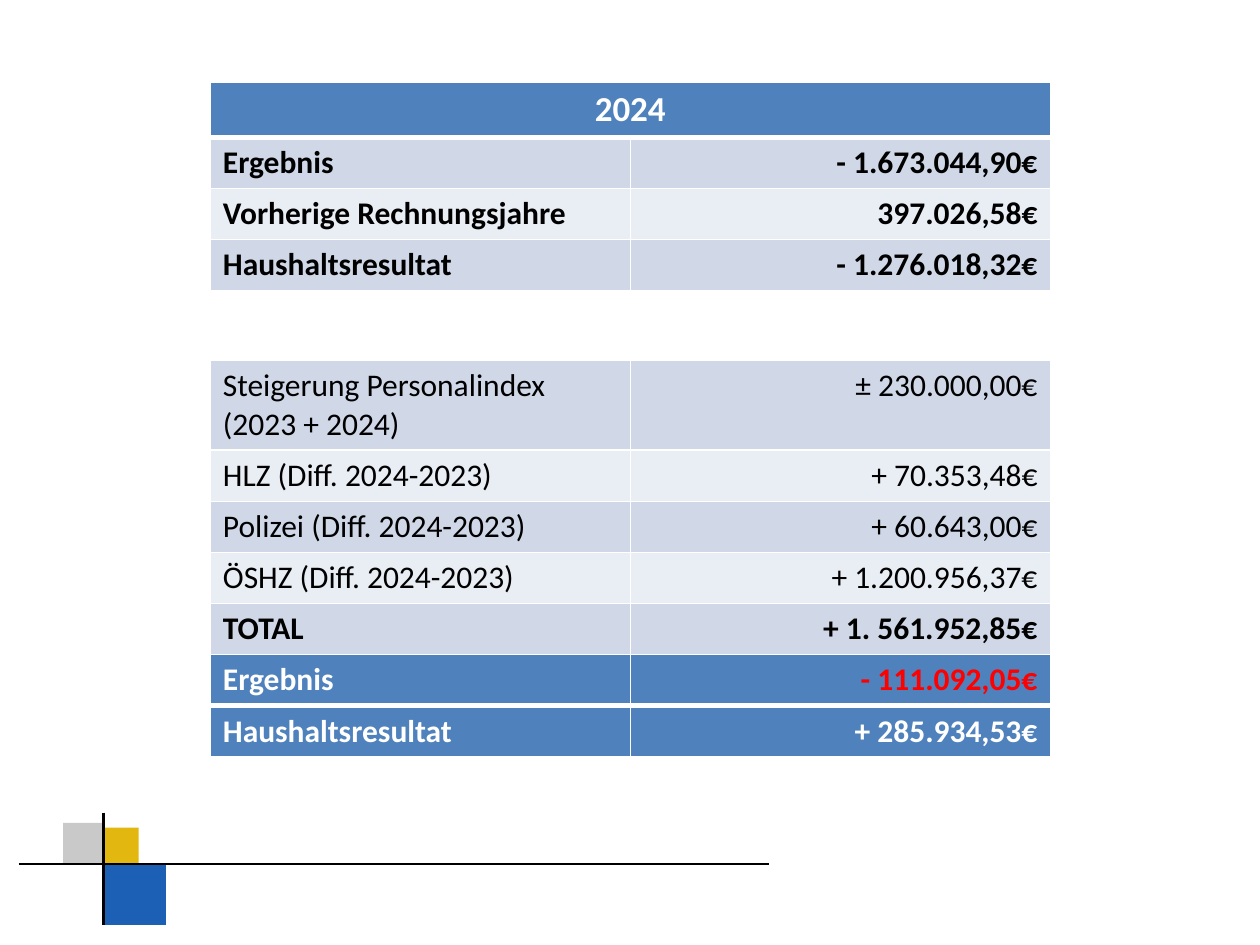
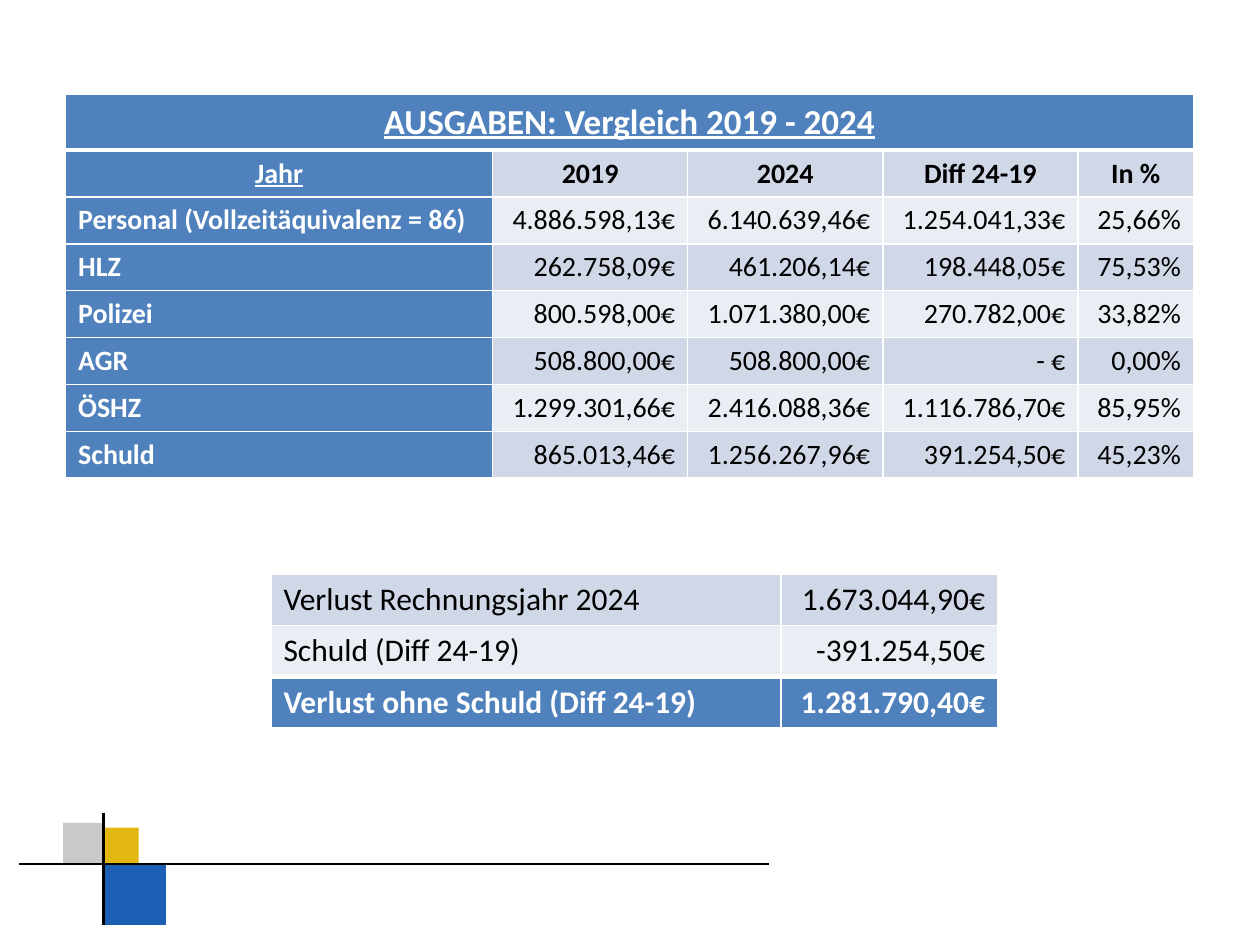
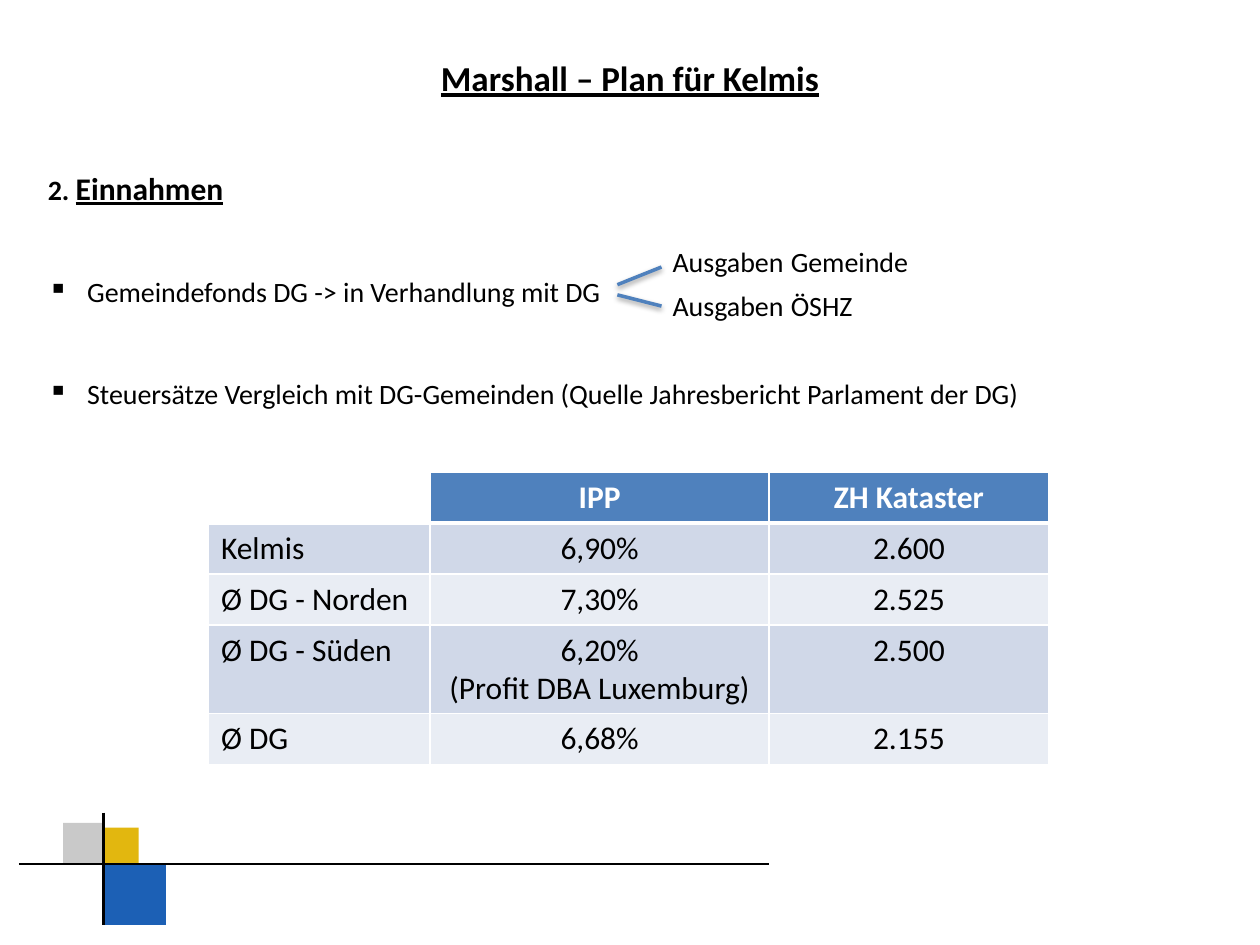
from lxml import etree
from pptx import Presentation
from pptx.dml.color import RGBColor
from pptx.enum.shapes import MSO_CONNECTOR, MSO_SHAPE
from pptx.enum.text import MSO_ANCHOR, PP_ALIGN
from pptx.oxml.ns import qn
from pptx.util import Pt

LEFT, CENTER, RIGHT = PP_ALIGN.LEFT, PP_ALIGN.CENTER, PP_ALIGN.RIGHT
TOP, MIDDLE = MSO_ANCHOR.TOP, MSO_ANCHOR.MIDDLE
STRAIGHT, RECTANGLE = MSO_CONNECTOR.STRAIGHT, MSO_SHAPE.RECTANGLE
FONT = "Calibri"
COLORS = {
    "text": "000000", "white": "FFFFFF", "accent": "4F81BD", "negative": "FF0000",
    "band_dark": "D0D8E8", "band_light": "E9EDF4",
    "blue": "1C60B5", "yellow": "E2B70F", "gray": "C9C9C9",
}
ROLES = {
    "title": {"size": 20, "bold": True, "accent": True, "align": CENTER},
    "head": {"bold": True, "accent": True, "align": CENTER},
    "years": {"bold": True, "align": CENTER},
    "body": {},
    "bold": {"bold": True},
    "total": {"bold": True, "accent": True},
}


def rgb(name):
    """Return the named palette colour."""
    return RGBColor.from_string(COLORS[name])


def add_text(paragraph, text, size=16, color="text", bold=False, underline=False, align=LEFT):
    """Append a formatted run to a paragraph."""
    paragraph.alignment = align
    run = paragraph.add_run()
    run.text = text
    font = run.font
    font.name, font.size = FONT, Pt(size)
    font.bold, font.underline = bold, underline
    font.color.rgb = rgb(color)


def add_frame(slide, left, top, width, height):
    """Add a wrapping text box and return its text frame."""
    frame = slide.shapes.add_textbox(Pt(left), Pt(top), Pt(width), Pt(height)).text_frame
    frame.word_wrap = True
    return frame


def add_line(slide, start, end, color, weight, shadow=False):
    """Draw a straight line, with a soft shadow on request."""
    line = slide.shapes.add_connector(STRAIGHT, *(Pt(value) for value in start + end))
    line.line.color.rgb = rgb(color)
    line.line.width = Pt(weight)
    effects = etree.SubElement(line._element.spPr, qn("a:effectLst"))
    if shadow:
        outer = etree.SubElement(effects, qn("a:outerShdw"), blurRad=str(Pt(3.1)),
                                 dist=str(Pt(1.6)), dir="5400000", rotWithShape="0")
        black = etree.SubElement(outer, qn("a:srgbClr"), val=COLORS["text"])
        etree.SubElement(black, qn("a:alpha"), val="38000")


def set_borders(cell, top, bottom):
    """Give a cell white borders with the given top and bottom weights."""
    properties = cell._tc.get_or_add_tcPr()
    for side, weight in (("L", 1), ("R", 1), ("T", top), ("B", bottom)):
        border = etree.SubElement(properties, qn(f"a:ln{side}"), w=str(Pt(weight)))
        fill = etree.SubElement(border, qn("a:solidFill"))
        etree.SubElement(fill, qn("a:srgbClr"), val=COLORS["white"])


def fill_cell(cell, text, fill, **text_format):
    """Fill a cell and write its lines, leaving an empty cell clear."""
    if not text:
        cell.fill.background()
        return
    cell.fill.solid()
    cell.fill.fore_color.rgb = rgb(fill)
    for number, line in enumerate(text.split("\n")):
        frame = cell.text_frame
        paragraph = frame.add_paragraph() if number else frame.paragraphs[0]
        add_text(paragraph, line, **text_format)


def add_table(slide, left, top, widths, rows, aligns, heavy, size=18, row_height=29.2,
              anchor=TOP, accent_column=False, underlined=(), negative=None):
    """Build a banded table with a heavy rule above the row numbered heavy."""
    table = slide.shapes.add_table(len(rows), len(widths), Pt(left), Pt(top),
                                   Pt(sum(widths)), Pt(row_height * len(rows))).table
    table.first_row = table.horz_banding = False
    for column, width in zip(table.columns, widths):
        column.width = Pt(width)
    band = 0
    for r, (role, *texts) in enumerate(rows):
        table.rows[r].height = Pt(row_height)
        style = ROLES[role]
        row_accent = style.get("accent", False)
        for c in range(len(widths)):
            cell = table.cell(r, c)
            cell.vertical_anchor = anchor
            set_borders(cell, 3 if r == heavy else 1, 3 if r + 1 == heavy else 1)
        if len(texts) == 1:
            table.cell(r, 0).merge(table.cell(r, len(widths) - 1))
        for c, text in enumerate(texts):
            accent = row_accent or (accent_column and c == 0)
            color = "white" if accent else "text"
            fill_cell(table.cell(r, c), text,
                      "accent" if accent else ("band_dark", "band_light")[band % 2],
                      size=style.get("size", size),
                      color="negative" if (r, c) == negative else color,
                      bold=style.get("bold", False) or accent,
                      underline=text in underlined,
                      align=style.get("align", aligns[c]))
        band += not row_accent


def add_footer_mark(slide, left, top):
    """Draw the squares and crossing rules at the foot of a slide."""
    cross_x, cross_y = left + 48.2, top + 29.4
    for x, y, side, color in ((48.7, 28.8, 35.3, "blue"), (48.3, 8.6, 20.2, "yellow"),
                              (25.2, 5.8, 23, "gray")):
        square = slide.shapes.add_shape(RECTANGLE, Pt(left + x), Pt(top + y), Pt(side), Pt(side))
        square.shadow.inherit = False
        square.fill.solid()
        square.fill.fore_color.rgb = rgb(color)
        square.line.fill.background()
    add_line(slide, (left, cross_y), (left + 428.4, cross_y), "text", 1.5)
    add_line(slide, (cross_x, top), (cross_x, top + 64.1), "text", 1.5)


def add_result_2024(slide, left, top):
    """Place the 2024 result above its adjusted calculation."""
    widths, aligns = (240, 240), (LEFT, RIGHT)
    add_table(slide, left, top, widths, [
        ("title", "2024"),
        ("bold", "Ergebnis", "- 1.673.044,90€"),
        ("bold", "Vorherige Rechnungsjahre", "397.026,58€"),
        ("bold", "Haushaltsresultat", "- 1.276.018,32€"),
    ], aligns, heavy=1)
    add_table(slide, left, top + 159.3, widths, [
        ("body", "Steigerung Personalindex (2023 + 2024)", "± 230.000,00€"),
        ("body", "HLZ (Diff. 2024-2023)", "+ 70.353,48€"),
        ("body", "Polizei (Diff. 2024-2023)", "+ 60.643,00€"),
        ("body", "ÖSHZ (Diff. 2024-2023)", "+ 1.200.956,37€"),
        ("bold", "TOTAL", "+ 1. 561.952,85€"),
        ("total", "Ergebnis", "- 111.092,05€"),
        ("total", "Haushaltsresultat", "+ 285.934,53€"),
    ], aligns, heavy=6, negative=(5, 1))


def add_expense_comparison(slide, left, top):
    """Place the expense comparison above the loss without debt."""
    heading = "AUSGABEN: Vergleich 2019 - 2024"
    add_table(slide, left, top, (244, 111.5, 111.5, 111.5, 66), [
        ("title", heading),
        ("years", "Jahr", "2019", "2024", "Diff 24-19", "In %"),
        ("body", "Personal (Vollzeitäquivalenz = 86)",
         "4.886.598,13€", "6.140.639,46€", "1.254.041,33€", "25,66%"),
        ("body", "HLZ", "262.758,09€", "461.206,14€", "198.448,05€", "75,53%"),
        ("body", "Polizei", "800.598,00€", "1.071.380,00€", "270.782,00€", "33,82%"),
        ("body", "AGR", "508.800,00€", "508.800,00€", "- €", "0,00%"),
        ("body", "ÖSHZ", "1.299.301,66€", "2.416.088,36€", "1.116.786,70€", "85,95%"),
        ("body", "Schuld", "865.013,46€", "1.256.267,96€", "391.254,50€", "45,23%"),
    ], (LEFT,) + (RIGHT,) * 4, heavy=1, size=16, row_height=26.7, anchor=MIDDLE,
        accent_column=True, underlined=(heading, "Jahr"))
    add_table(slide, left + 117.3, top + 274.3, (291.6, 123.8), [
        ("body", "Verlust Rechnungsjahr 2024", "1.673.044,90€"),
        ("body", "Schuld (Diff 24-19)", "-391.254,50€"),
        ("total", "Verlust ohne Schuld (Diff 24-19)", "1.281.790,40€"),
    ], (LEFT, RIGHT), heavy=2)


def add_bullet(frame, text):
    """Append a bulleted paragraph set apart from the one before."""
    paragraph = frame.add_paragraph()
    properties = paragraph._p.get_or_add_pPr()
    properties.set("marL", str(Pt(22.5)))
    properties.set("indent", str(Pt(-22.5)))
    etree.SubElement(properties, qn("a:buChar"), char="▪")
    paragraph.space_before = Pt(39)
    add_text(paragraph, text)


def add_fund_branches(slide, left, top):
    """Branch the municipal fund into its two kinds of expense."""
    for number, (name, start_y, end_y) in enumerate((("Gemeinde", 28.8, 18.7),
                                                     ("ÖSHZ", 34.6, 41))):
        add_line(slide, (left, top + start_y), (left + 25.2, top + end_y), "accent", 2, shadow=True)
        paragraph = add_frame(slide, left + 24.5, top + 25.2 * number, 160, 29).paragraphs[0]
        for text, size in (("Ausgaben", 16), (" ", 18), (name, 16)):
            add_text(paragraph, text, size=size)


def add_income_plan(slide, left, top):
    """Place the title, the income points and the tax rate table."""
    title = add_frame(slide, left + 162.7, top, 354.2, 55.4).paragraphs[0]
    add_text(title, "Marshall – Plan für Kelmis", size=20, bold=True, underline=True, align=CENTER)
    points = add_frame(slide, left, top + 64.1, 584.6, 164.9)
    add_text(points.paragraphs[0], "2. ", bold=True)
    add_text(points.paragraphs[0], "Einnahmen", size=18, bold=True, underline=True)
    add_bullet(points, "Gemeindefonds DG -> in Verhandlung mit DG")
    add_bullet(points, "Steuersätze Vergleich mit DG-Gemeinden (Quelle Jahresbericht Parlament der DG)")
    add_table(slide, left + 98.9, top + 240.8, (126.7, 193.7, 159.8), [
        ("head", "", "IPP", "ZH Kataster"),
        ("body", "Kelmis", "6,90%", "2.600"),
        ("body", "Ø DG - Norden", "7,30%", "2.525"),
        ("body", "Ø DG - Süden", "6,20%\n(Profit DBA Luxemburg)", "2.500"),
        ("body", "Ø DG", "6,68%", "2.155"),
    ], (LEFT, CENTER, CENTER), heavy=1)
    add_fund_branches(slide, left + 332.6, top + 105.1)


def main():
    """Build the three slides and save them."""
    deck = Presentation()
    deck.slide_width, deck.slide_height = Pt(720), Pt(540)
    for add_content, left, top in ((add_result_2024, 120.2, 46.8),
                                   (add_expense_comparison, 37.5, 54),
                                   (add_income_plan, 20.2, 28.8)):
        slide = deck.slides.add_slide(deck.slide_layouts[6])
        add_footer_mark(slide, 10.8, 464.4)
        add_content(slide, left, top)
    deck.save("out.pptx")


if __name__ == "__main__":
    main()
